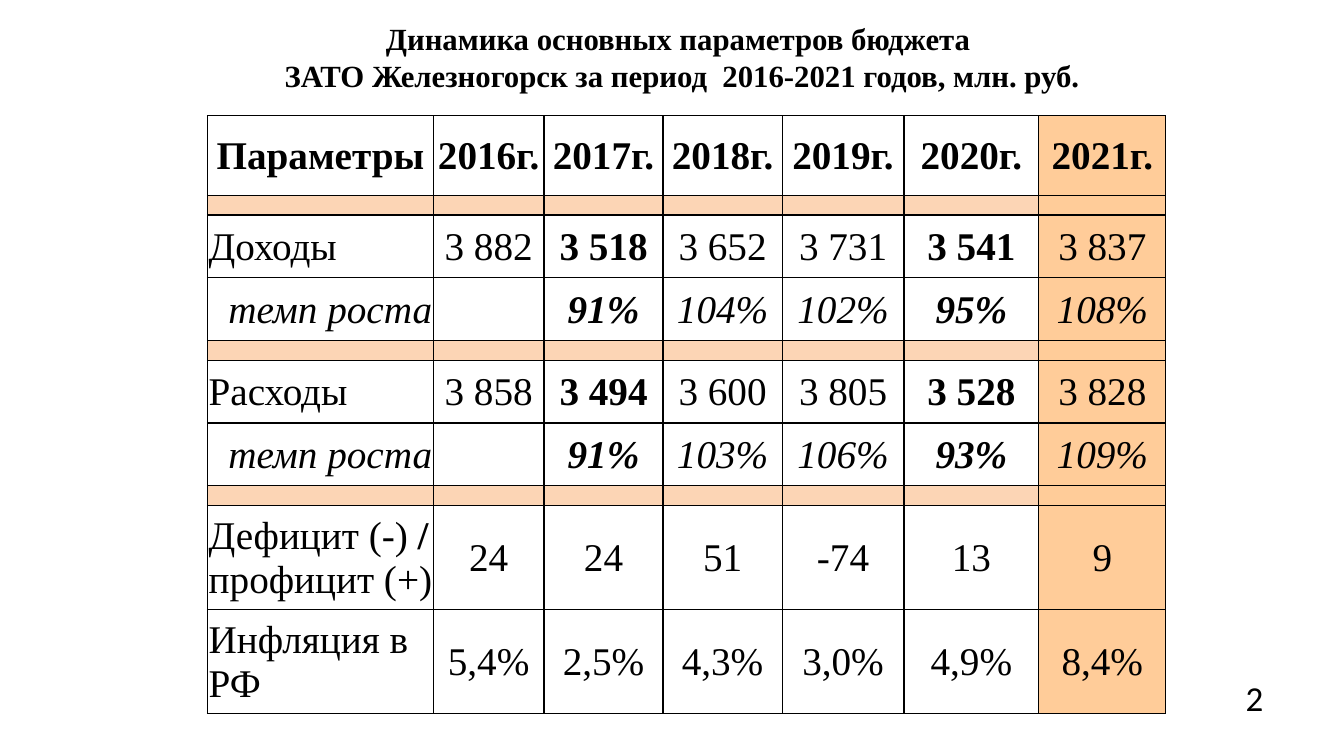
"""Build a slide with a table of budget figures for 2016-2021."""
from lxml.etree import SubElement
from pptx import Presentation
from pptx.dml.color import RGBColor
from pptx.enum.text import MSO_ANCHOR, PP_ALIGN
from pptx.oxml import parse_xml
from pptx.oxml.ns import nsdecls, qn
from pptx.util import Cm, Pt

BLACK = RGBColor(0, 0, 0)
PEACH = RGBColor(0xFC, 0xD5, 0xB5)
ORANGE = RGBColor(0xFF, 0xCC, 0x99)
SERIF = "Times New Roman"
HEAD, GAP, LINE, TALL = 2.0, 0.5, 1.58, 2.62

WIDTHS = [5.69, 2.79, 3.0, 3.0, 3.07, 3.4, 3.2]
ROWS = [
    (HEAD, ["Параметры"] + [f"{year}г." for year in range(2016, 2022)]),
    (GAP, [""] * 7),
    (LINE, ["Доходы", "3 882", "3 518", "3 652", "3 731", "3 541", "3 837"]),
    (LINE, ["темп роста", "", "91%", "104%", "102%", "95%", "108%"]),
    (GAP, [""] * 7),
    (LINE, ["Расходы", "3 858", "3 494", "3 600", "3 805", "3 528", "3 828"]),
    (LINE, ["темп роста", "", "91%", "103%", "106%", "93%", "109%"]),
    (GAP, [""] * 7),
    (TALL, ["Дефицит (-) / профицит (+)", "24", "24", "51", "-74", "13", "9"]),
    (TALL, ["Инфляция в РФ", "5,4%", "2,5%", "4,3%", "3,0%", "4,9%", "8,4%"]),
]


def style(run, name, size, bold=False, italic=False):
    font = run.font
    font.name, font.size = name, Pt(size)
    font.bold, font.italic = bold, italic
    font.color.rgb = BLACK


def frame(cell):
    props = cell._tc.get_or_add_tcPr()
    for place, side in enumerate("LRTB"):
        props.insert(place, parse_xml(
            f'<a:ln{side} {nsdecls("a")} w="12700"><a:solidFill>'
            f'<a:srgbClr val="{BLACK}"/></a:solidFill></a:ln{side}>'))


deck = Presentation()
deck.slide_width, deck.slide_height = Cm(33.87), Cm(19.05)
slide = deck.slides.add_slide(deck.slide_layouts[6])

title = slide.shapes.add_textbox(Cm(5.54), Cm(0), Cm(23.29), Cm(2.87)).text_frame
title.word_wrap = True
title.vertical_anchor = MSO_ANCHOR.MIDDLE
lines = title.paragraphs[0]
lines.text = ("Динамика основных параметров бюджета \v"
              "ЗАТО Железногорск за период  2016-2021 годов, млн. руб.")
lines.alignment = PP_ALIGN.CENTER
for run in lines.runs:
    style(run, SERIF, 22, bold=True)

table = slide.shapes.add_table(
    len(ROWS), len(WIDTHS), Cm(5.23), Cm(2.92),
    Cm(sum(WIDTHS)), Cm(sum(height for height, _ in ROWS))).table
table.first_row = table.horz_banding = False
for column, width in zip(table.columns, WIDTHS):
    column.width = Cm(width)

for r, (height, texts) in enumerate(ROWS):
    table.rows[r].height = Cm(height)
    growth = texts[0] == "темп роста"
    for c, text in enumerate(texts):
        cell = table.cell(r, c)
        cell.margin_left = cell.margin_right = cell.margin_top = Cm(0.03)
        cell.margin_bottom = 0
        cell.vertical_anchor = MSO_ANCHOR.MIDDLE
        if c == 6 or height == GAP:
            cell.fill.solid()
            cell.fill.fore_color.rgb = ORANGE if c == 6 else PEACH
        else:
            cell.fill.background()
        frame(cell)
        para = cell.text_frame.paragraphs[0]
        if not text:
            SubElement(para._p, qn("a:endParaRPr"), sz="800")
            continue
        if c:
            para.alignment = PP_ALIGN.CENTER
        elif height == HEAD:
            para.alignment = PP_ALIGN.CENTER
        else:
            para.alignment = PP_ALIGN.RIGHT if growth else PP_ALIGN.LEFT
        before, slash, after = text.partition("/ ")
        bold = height == HEAD or (height == LINE and c in (2, 5))
        for part in filter(None, (before, slash, after)):
            run = para.add_run()
            run.text = part
            style(run, SERIF, 28, bold or part == slash, growth)

number = slide.shapes.add_textbox(Cm(31.14), Cm(16.92), Cm(1.8), Cm(1.32)).text_frame
number.word_wrap = True
number.text = "2"
style(number.paragraphs[0].runs[0], "Calibri", 25)

deck.save("out.pptx")
